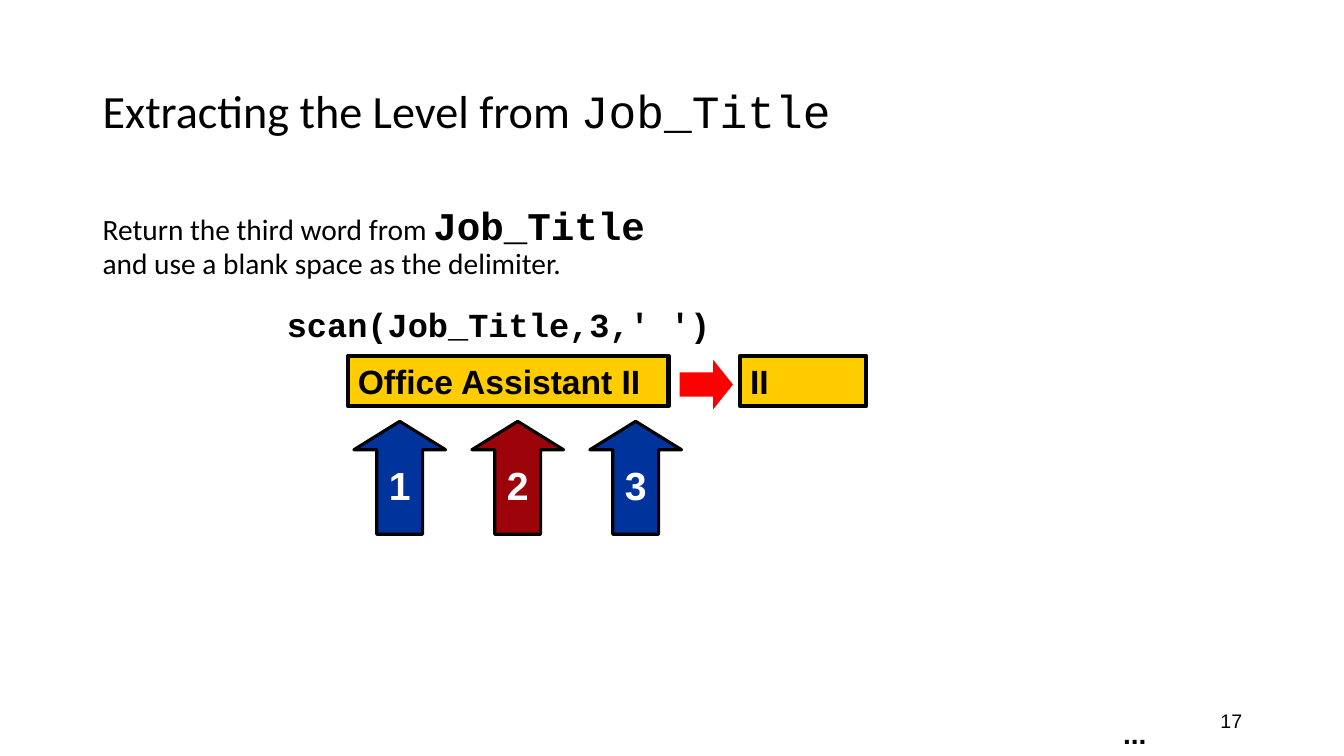
from dataclasses import dataclass

from pptx import Presentation
from pptx.dml.color import RGBColor
from pptx.enum.shapes import MSO_SHAPE
from pptx.enum.text import MSO_ANCHOR, MSO_AUTO_SIZE, PP_ALIGN
from pptx.util import Inches, Pt


@dataclass(frozen=True)
class Theme:
    sans: str = "Calibri"
    label: str = "Arial"
    code: str = "Courier New"
    black: str = "000000"
    white: str = "FFFFFF"
    yellow: str = "FFCC00"
    blue: str = "00349C"
    dark_red: str = "9C0409"
    red: str = "FF0000"
    title: float = 33
    body: float = 21
    large: float = 28
    medium: float = 24
    dots: float = 20
    number: float = 14


THEME = Theme()


def set_font(font, name, size, color=THEME.black, bold=False):
    font.name = name
    font.size = Pt(size)
    font.bold = bold
    font.color.rgb = RGBColor.from_string(color)


def add_text_box(page, left, top, width, height, anchor=MSO_ANCHOR.TOP, wrap=True):
    box = page.shapes.add_textbox(Inches(left), Inches(top), Inches(width), Inches(height))
    box.text_frame.word_wrap = wrap
    box.text_frame.vertical_anchor = anchor
    return box


def write(box, text, name, size, color=THEME.black, bold=True, align=PP_ALIGN.LEFT):
    para = box.text_frame.paragraphs[0]
    para.text = text
    para.alignment = align
    set_font(para.font, name, size, color, bold)


def add_span(para, text, name, size, bold=False):
    span = para.add_run()
    span.text = text
    set_font(span.font, name, size, bold=bold)


def add_figure(page, kind, left, top, width, height, fill, line_width=0):
    figure = page.shapes.add_shape(
        kind, Inches(left), Inches(top), Inches(width), Inches(height))
    figure.shadow.inherit = False
    figure.fill.solid()
    figure.fill.fore_color.rgb = RGBColor.from_string(fill)
    if line_width:
        figure.line.color.rgb = RGBColor.from_string(THEME.black)
        figure.line.width = Pt(line_width)
    else:
        figure.line.fill.background()
    return figure


def add_value_box(page, text, left, width):
    box = add_figure(page, MSO_SHAPE.RECTANGLE, left, 3.53, width, 0.5, THEME.yellow, 3)
    box.text_frame.vertical_anchor = MSO_ANCHOR.TOP
    box.text_frame.auto_size = MSO_AUTO_SIZE.SHAPE_TO_FIT_TEXT
    write(box, text, THEME.label, THEME.medium)


def add_word_arrow(page, text, left, fill):
    arrow = add_figure(page, MSO_SHAPE.UP_ARROW, left, 4.18, 0.91, 1.12, fill, 2.25)
    arrow.adjustments[0] = 0.5
    arrow.adjustments[1] = 0.31
    arrow.text_frame.word_wrap = False
    arrow.text_frame.vertical_anchor = MSO_ANCHOR.MIDDLE
    write(arrow, text, THEME.label, THEME.large, THEME.white, align=PP_ALIGN.CENTER)


def add_result_arrow(page):
    arrow = add_figure(page, MSO_SHAPE.RIGHT_ARROW, 6.74, 3.57, 0.53, 0.49, THEME.red)
    arrow.adjustments[0] = 0.49
    arrow.adjustments[1] = 0.4


def add_title(page):
    box = add_text_box(page, 0.92, 0.4, 11.5, 1.45, MSO_ANCHOR.MIDDLE)
    para = box.text_frame.paragraphs[0]
    para.line_spacing = 0.9
    add_span(para, "Extracting the Level from ", THEME.sans, THEME.title)
    add_span(para, "Job_Title", THEME.code, THEME.title)


def add_body(page):
    box = add_text_box(page, 0.92, 2, 11.5, 4.76)
    para = box.text_frame.paragraphs[0]
    para.line_spacing = 0.9
    para.space_before = Pt(7.5)
    add_span(para, "Return the third word from ", THEME.sans, THEME.body)
    add_span(para, "Job_Title", THEME.code, THEME.large, True)
    add_span(para, " ", THEME.sans, THEME.body)
    para.add_line_break()
    add_span(para, "and use a blank space as the delimiter.", THEME.sans, THEME.body)


def add_scan_call(page):
    box = add_text_box(page, 2.83, 3.02, 4.23, 0.4, wrap=False)
    frame = box.text_frame
    frame.margin_left = frame.margin_right = frame.margin_top = frame.margin_bottom = 0
    frame.auto_size = MSO_AUTO_SIZE.SHAPE_TO_FIT_TEXT
    write(box, "scan(Job_Title,3,' ')", THEME.code, THEME.medium, align=PP_ALIGN.CENTER)


def add_footer(page):
    number = add_text_box(page, 9.42, 6.95, 3, 0.4, MSO_ANCHOR.MIDDLE)
    write(number, "17", THEME.label, THEME.number, bold=False, align=PP_ALIGN.RIGHT)
    dots = add_text_box(page, 11.04, 7.06, 0.43, 0.44, wrap=False)
    dots.text_frame.auto_size = MSO_AUTO_SIZE.SHAPE_TO_FIT_TEXT
    write(dots, "...", THEME.label, THEME.dots)


def main():
    deck = Presentation()
    deck.slide_width = Inches(13.33)
    deck.slide_height = Inches(7.5)
    page = deck.slides.add_slide(deck.slide_layouts[6])

    add_title(page)
    add_body(page)
    add_scan_call(page)
    add_value_box(page, "Office Assistant II", 3.45, 3.18)
    add_result_arrow(page)
    add_value_box(page, "II", 7.34, 1.25)
    for index, fill in enumerate((THEME.blue, THEME.dark_red, THEME.blue)):
        add_word_arrow(page, str(index + 1), 3.51 + 1.17 * index, fill)
    add_footer(page)

    deck.save("out.pptx")


if __name__ == "__main__":
    main()
